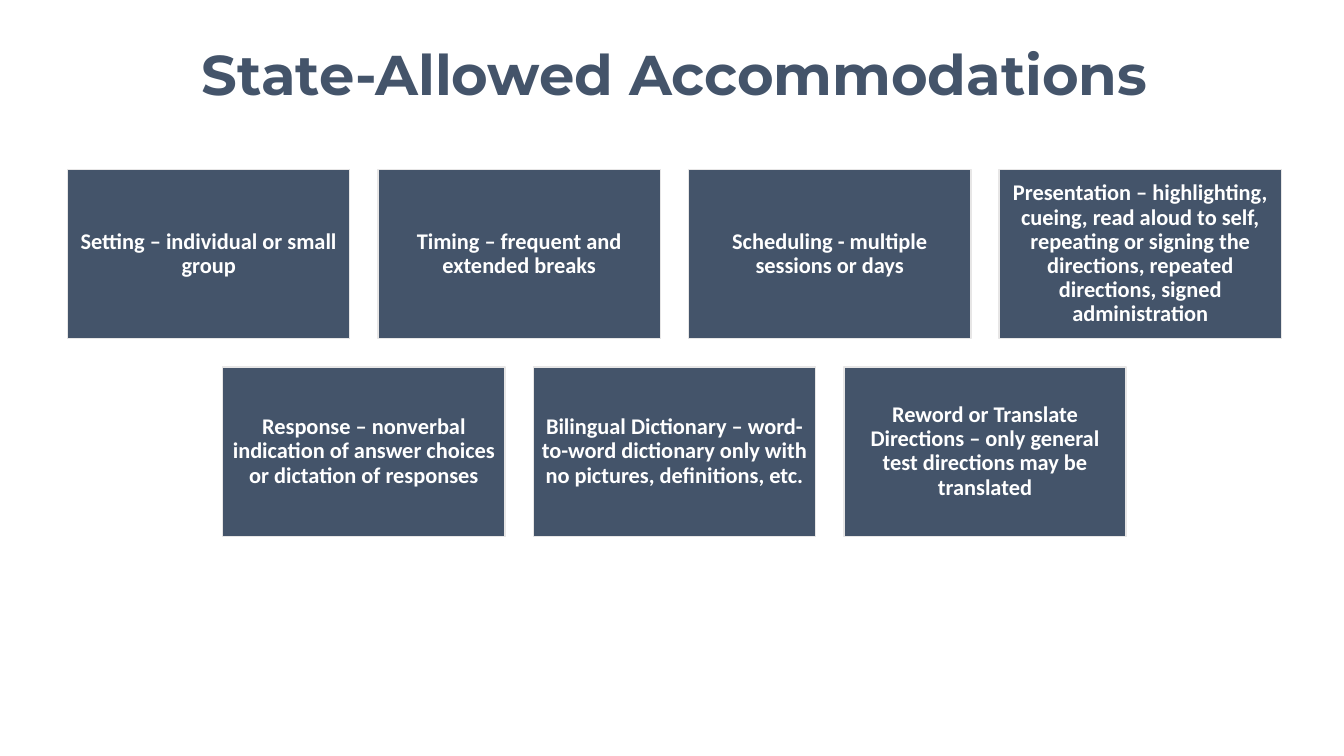
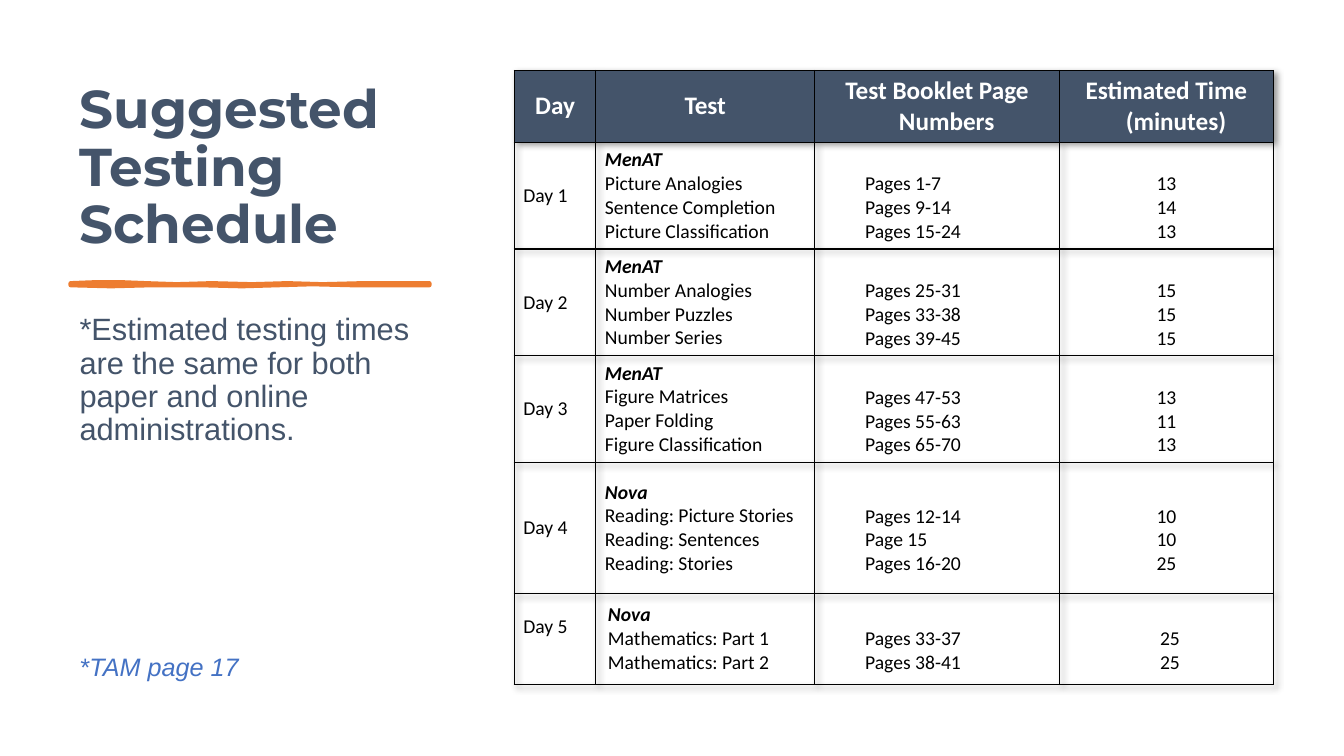
import pptx
import pptx.dml.color
import pptx.enum.shapes
import pptx.enum.text
import pptx.oxml
import pptx.oxml.ns
import pptx.util

Inches = pptx.util.Inches
Pt = pptx.util.Pt
Align = pptx.enum.text.PP_ALIGN
Anchor = pptx.enum.text.MSO_ANCHOR

COLORS = {
    "slate": "44546A",
    "white": "FFFFFF",
    "black": "000000",
    "card_edge": "E7E6E6",
    "orange": "ED7D31",
    "blue": "4472C4",
}
TITLE_FONT, TABLE_FONT, NOTE_FONT = "Montserrat", "Calibri", "Arial"

CARD_ROWS = [
    [
        "Setting – individual or small group",
        "Timing – frequent and extended breaks",
        "Scheduling - multiple sessions or days",
        "Presentation – highlighting, cueing, read aloud to self, repeating or "
        "signing the directions, repeated directions, signed administration",
    ],
    [
        "Response – nonverbal indication of answer choices or dictation of responses",
        "Bilingual Dictionary – word-to-word dictionary only with no pictures, "
        "definitions, etc.",
        "Reword or Translate Directions – only general test directions may be translated",
    ],
]
CARD_WIDTH, CARD_HEIGHT, CARD_GAP = 2.8, 1.68, 0.28
CARDS_LEFT, CARDS_TOP, CARDS_WIDTH = 0.67, 1.68, 12.04

HEADINGS = ["Day", "Test", "Test Booklet Page Numbers", "Estimated Time (minutes)"]
SCHEDULE = [
    ("Day 1", "MenAT", [("Picture Analogies", "Pages 1-7", "13"),
                        ("Sentence Completion", "Pages 9-14", "14"),
                        ("Picture Classification", "Pages 15-24", "13")]),
    ("Day 2", "MenAT", [("Number Analogies", "Pages 25-31", "15"),
                        ("Number Puzzles", "Pages 33-38", "15"),
                        ("Number Series", "Pages 39-45", "15")]),
    ("Day 3", "MenAT", [("Figure Matrices", "Pages 47-53", "13"),
                        ("Paper Folding", "Pages 55-63", "11"),
                        ("Figure Classification", "Pages 65-70", "13")]),
    ("Day 4", "Nova", [("Reading: Picture Stories", "Pages 12-14", "10"),
                       ("Reading: Sentences", "Page 15", "10"),
                       ("Reading: Stories", "Pages 16-20", "25")]),
    ("Day 5", "Nova", [("Mathematics: Part 1", "Pages 33-37", "25"),
                       ("Mathematics: Part 2", "Pages 38-41", "25")]),
]
COLUMN_WIDTHS = [0.81, 2.17, 2.43, 2.12]
ROW_HEIGHTS = [0.71, 1.06, 1.06, 1.06, 1.3, 0.9]
CELL_SIDE, CELL_EDGE, LINE_HEIGHT, PAGES_INDENT = 0.09, 0.04, 0.24, 0.5

STROKE_TOP = [(0.7, 2.81), (0.95, 2.8), (1.2, 2.8), (1.45, 2.81), (1.75, 2.82),
              (2.1, 2.81), (2.5, 2.82), (2.85, 2.81), (3.2, 2.82), (3.6, 2.81),
              (3.9, 2.81), (4.26, 2.81)]
STROKE_BOTTOM = [(4.26, 2.83), (3.9, 2.83), (3.5, 2.83), (3.1, 2.82), (2.75, 2.83),
                 (2.4, 2.84), (2.0, 2.83), (1.5, 2.83), (1.1, 2.84), (0.7, 2.83)]


def rgb(name):
    return pptx.dml.color.RGBColor.from_string(COLORS[name])


def add_run(para, text, font, size, color, bold=False, italic=False):
    span = para.add_run()
    span.text = text
    span.font.name = font
    span.font.size = Pt(size)
    span.font.color.rgb = rgb(color)
    span.font.bold = bold
    span.font.italic = italic


def add_title(slide, text, area, size, align, anchor):
    title = slide.shapes.title
    title.left, title.top, title.width, title.height = map(Inches, area)
    frame = title.text_frame
    frame.auto_size = pptx.enum.text.MSO_AUTO_SIZE.NONE
    frame.word_wrap = True
    frame.vertical_anchor = anchor
    para = frame.paragraphs[0]
    para.alignment = align
    para.line_spacing = 0.9
    add_run(para, text, TITLE_FONT, size, "slate", bold=True)


def add_note(slide, text, area, size, color, italic=False, spacing=1.0):
    box = slide.shapes.add_textbox(*map(Inches, area))
    box.text_frame.word_wrap = True
    para = box.text_frame.paragraphs[0]
    para.line_spacing = spacing
    add_run(para, text, NOTE_FONT, size, color, italic=italic)


def add_card(slide, text, left, top):
    card = slide.shapes.add_shape(
        pptx.enum.shapes.MSO_SHAPE.RECTANGLE,
        Inches(left), Inches(top), Inches(CARD_WIDTH), Inches(CARD_HEIGHT))
    card.shadow.inherit = False
    card.fill.solid()
    card.fill.fore_color.rgb = rgb("slate")
    card.line.color.rgb = rgb("card_edge")
    card.line.width = Pt(1)
    frame = card.text_frame
    frame.word_wrap = True
    frame.vertical_anchor = Anchor.MIDDLE
    frame.margin_left = frame.margin_right = Inches(0.07)
    frame.margin_top = frame.margin_bottom = Inches(0.07)
    para = frame.paragraphs[0]
    para.alignment = Align.CENTER
    para.line_spacing = 0.9
    add_run(para, text, TABLE_FONT, 16, "white", bold=True)


def add_card_rows(slide):
    """Lay out the cards with each row centred in the shared width."""
    for row_index, texts in enumerate(CARD_ROWS):
        row_width = len(texts) * (CARD_WIDTH + CARD_GAP) - CARD_GAP
        left = CARDS_LEFT + (CARDS_WIDTH - row_width) / 2
        top = CARDS_TOP + row_index * (CARD_HEIGHT + CARD_GAP)
        for index, text in enumerate(texts):
            add_card(slide, text, left + index * (CARD_WIDTH + CARD_GAP), top)


def add_brush_stroke(slide):
    start, *others = [(Inches(x), Inches(y)) for x, y in STROKE_TOP + STROKE_BOTTOM]
    builder = slide.shapes.build_freeform(*start)
    builder.add_line_segments(others, close=True)
    stroke = builder.convert_to_shape()
    stroke.shadow.inherit = False
    stroke.fill.solid()
    stroke.fill.fore_color.rgb = rgb("orange")
    stroke.line.color.rgb = rgb("orange")
    stroke.line.width = Pt(3)
    stroke.line._get_or_add_ln().append(
        pptx.oxml.parse_xml(f"<a:round {pptx.oxml.ns.nsdecls('a')}/>"))


def format_cell(cell, fill=None, left=CELL_SIDE, top=CELL_EDGE, bottom=CELL_EDGE):
    """Set borders, fill, anchor and margins; borders precede the fill in the XML."""
    properties = cell._tc.get_or_add_tcPr()
    for side in "LRTB":
        properties.append(pptx.oxml.parse_xml(
            f'<a:ln{side} {pptx.oxml.ns.nsdecls("a")} w="{Pt(1)}"><a:solidFill>'
            f'<a:srgbClr val="{COLORS["black"]}"/></a:solidFill></a:ln{side}>'))
    if fill:
        cell.fill.solid()
        cell.fill.fore_color.rgb = rgb(fill)
    else:
        cell.fill.background()
    cell.vertical_anchor = Anchor.MIDDLE
    cell.margin_left, cell.margin_right = Inches(left), Inches(CELL_SIDE)
    cell.margin_top, cell.margin_bottom = Inches(top), Inches(bottom)


def write_lines(cell, lines, align=Align.LEFT, heading=None):
    """Write one paragraph per line, below an optional bold italic heading."""
    frame = cell.text_frame
    texts = [heading, *lines] if heading else lines
    for index, text in enumerate(texts):
        para = frame.add_paragraph() if index else frame.paragraphs[0]
        para.alignment = align
        strong = bool(heading) and index == 0
        add_run(para, text, TABLE_FONT, 14, "black", bold=strong, italic=strong)


def add_table_shadow(table):
    table._tbl.tblPr.insert(0, pptx.oxml.parse_xml(
        f'<a:effectLst {pptx.oxml.ns.nsdecls("a")}>'
        '<a:outerShdw blurRad="50800" dist="38100" dir="2700000" algn="tl" '
        f'rotWithShape="0"><a:srgbClr val="{COLORS["black"]}">'
        '<a:alpha val="40000"/></a:srgbClr></a:outerShdw></a:effectLst>'))


def add_header_row(table):
    for cell, text in zip(table.rows[0].cells, HEADINGS):
        format_cell(cell, fill="slate")
        para = cell.text_frame.paragraphs[0]
        para.alignment = Align.CENTER
        properties = para._p.get_or_add_pPr()
        properties.set("marL", str(Inches(0.19)))
        properties.set("indent", str(-Inches(0.19)))
        add_run(para, text, TABLE_FONT, 18, "white", bold=True)


def add_schedule(slide):
    frame = slide.shapes.add_table(
        len(ROW_HEIGHTS), len(COLUMN_WIDTHS), Inches(5.1), Inches(0.7),
        Inches(sum(COLUMN_WIDTHS)), Inches(sum(ROW_HEIGHTS)))
    table = frame.table
    table.horz_banding = False
    add_table_shadow(table)
    for column, width in zip(table.columns, COLUMN_WIDTHS):
        column.width = Inches(width)
    for row, height in zip(table.rows, ROW_HEIGHTS):
        row.height = Inches(height)
    add_header_row(table)

    below_heading = CELL_EDGE + LINE_HEIGHT
    for row_index, (day, battery, tests) in enumerate(SCHEDULE, start=1):
        is_last = row_index == len(SCHEDULE)
        names, pages, minutes = zip(*tests)
        day_cell, test_cell, pages_cell, time_cell = table.rows[row_index].cells
        format_cell(day_cell, bottom=below_heading if is_last else CELL_EDGE)
        write_lines(day_cell, [day])
        format_cell(test_cell, left=0.12 if is_last else CELL_SIDE)
        write_lines(test_cell, names, heading=battery)
        format_cell(pages_cell, left=PAGES_INDENT, top=below_heading)
        write_lines(pages_cell, pages)
        format_cell(time_cell, left=0.16 if is_last else CELL_SIDE, top=below_heading)
        write_lines(time_cell, minutes, align=Align.CENTER)


def main():
    deck = pptx.Presentation()
    deck.slide_width, deck.slide_height = Inches(13.33), Inches(7.5)
    title_only = deck.slide_layouts.get_by_name("Title Only")

    page = deck.slides.add_slide(title_only)
    add_title(page, "State-Allowed Accommodations", (0.67, 0.33, 12.04, 0.88),
              40, Align.CENTER, Anchor.MIDDLE)
    add_card_rows(page)

    page = deck.slides.add_slide(title_only)
    add_title(page, "Suggested Testing Schedule", (0.69, 0.7, 3.75, 1.88),
              38, Align.LEFT, Anchor.BOTTOM)
    add_brush_stroke(page)
    add_note(page, "*Estimated testing times are the same for both paper and "
             "online administrations.", (0.69, 3.07, 3.75, 3.73), 22, "slate", spacing=0.9)
    add_schedule(page)
    add_note(page, "*TAM page 17", (0.69, 6.41, 3.96, 0.4), 18, "blue", italic=True)

    deck.save("out.pptx")


if __name__ == "__main__":
    main()
